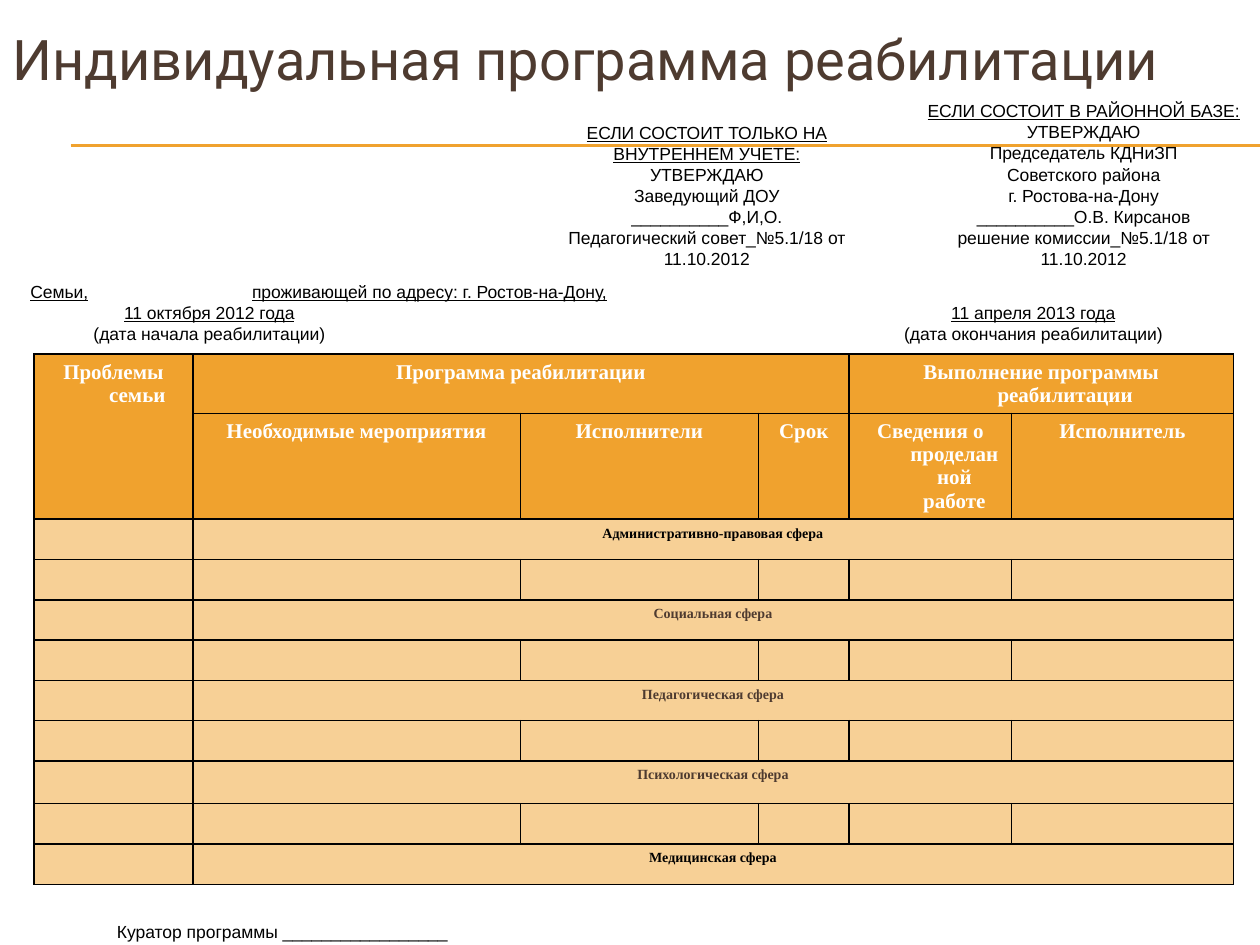
from pptx import Presentation
from pptx.dml.color import RGBColor
from pptx.enum.shapes import MSO_CONNECTOR
from pptx.enum.text import MSO_ANCHOR, PP_ALIGN
from pptx.oxml.ns import qn
from pptx.util import Inches, Pt
from lxml.etree import SubElement

GOLD, BROWN, BLACK, WHITE = "F0A22E", "4E3B30", "000000", "FFFFFF"
BODY = {"name": "Arial", "size": Pt(10), "color": BLACK}
LINED = {**BODY, "underline": True}
HEAD = {"name": "Times New Roman", "size": Pt(12), "bold": True, "color": WHITE}
COLS = [1.26, 2.6, 1.89, 0.72, 1.29, 1.76]
ROWS = [0.47, 0.84] + [0.32] * 5 + [0.32, 0.34, 0.32, 0.32]
HEADS = [(0, 0, 1, 0, "Проблемы семьи"),
         (0, 1, 0, 3, "Программа реабилитации"),
         (0, 4, 0, 5, "Выполнение программы реабилитации"),
         (1, 1, 1, 1, "Необходимые мероприятия"),
         (1, 2, 1, 2, "Исполнители"),
         (1, 3, 1, 3, "Срок"),
         (1, 4, 1, 4, "Сведения о проделанной работе"),
         (1, 5, 1, 5, "Исполнитель")]
SPHERES = [("Административно-правовая сфера", BLACK),
           ("Социальная сфера", BROWN),
           ("Педагогическая сфера", BROWN),
           ("Психологическая сфера", BROWN),
           ("Медицинская сфера", BLACK)]


def rgb(code):
    return RGBColor.from_string(code)


def style(font, fmt):
    for key, val in fmt.items():
        if key == "color":
            font.color.rgb = rgb(val)
        else:
            setattr(font, key, val)


def write(para, text, fmt):
    run = para.add_run()
    run.text = text
    style(run.font, fmt)


def add_tabs(para, stops):
    tabs = SubElement(para._p.get_or_add_pPr(), qn("a:tabLst"))
    for place, kind in stops:
        SubElement(tabs, qn("a:tab"), pos=str(Inches(place)), algn=kind)


def add_title(slide, box):
    title = slide.shapes.title
    title.left, title.top, title.width, title.height = map(Inches, box)
    frame = title.text_frame
    frame.vertical_anchor = MSO_ANCHOR.MIDDLE
    para = frame.paragraphs[0]
    para.alignment = PP_ALIGN.LEFT
    write(para, "Индивидуальная программа реабилитации",
          {"name": "Roboto", "size": Pt(32), "color": BROWN})


def add_rule(slide, left, right, top):
    line = slide.shapes.add_connector(
        MSO_CONNECTOR.STRAIGHT, *map(Inches, (left, top, right, top)))
    line.line.color.rgb = rgb(GOLD)
    line.line.width = Pt(0.75)
    SubElement(line._element.spPr, qn("a:effectLst"))


def add_text(slide, box, paras, align=PP_ALIGN.LEFT, anchor=MSO_ANCHOR.MIDDLE):
    """Each paragraph is a list of (text, format) runs."""
    frame = slide.shapes.add_textbox(*map(Inches, box)).text_frame
    frame.word_wrap = True
    frame.vertical_anchor = anchor
    for i, runs in enumerate(paras):
        para = frame.add_paragraph() if i else frame.paragraphs[0]
        para.alignment = align
        for text, fmt in runs:
            write(para, text, fmt)
    return frame


def add_stamp(slide, box, head, lines):
    paras = [[(head, LINED)]] + [[(line, BODY)] for line in lines]
    add_text(slide, box, paras, PP_ALIGN.CENTER)


def add_family(slide, box):
    frame = add_text(slide, box, [
        [("Семьи,\tпроживающей по адресу: г. Ростов-на-Дону,\t", LINED)],
        [("\t", BODY), ("11 октября 2012 года", LINED),
         ("\t", BODY), ("11 апреля 2013 года", LINED)],
        [("\t(дата начала реабилитации)\t(дата окончания реабилитации)", BODY)]])
    frame.margin_left = Inches(0.24)
    dates = [(1.42, "ctr"), (7.96, "ctr")]
    stops = [[(1.76, "l"), (9.46, "r")], dates, dates]
    for para, places in zip(frame.paragraphs, stops):
        add_tabs(para, places)


def paint(cell, alpha):
    props = cell._tc.get_or_add_tcPr()
    for side in ("lnL", "lnR", "lnT", "lnB"):
        edge = SubElement(props, qn("a:" + side), w=str(Pt(1)))
        fill = SubElement(edge, qn("a:solidFill"))
        SubElement(fill, qn("a:srgbClr"), val=BLACK)
    cell.fill.solid()
    cell.fill.fore_color.rgb = rgb(GOLD)
    if alpha < 100:
        tint = props.find(qn("a:solidFill")).find(qn("a:srgbClr"))
        SubElement(tint, qn("a:alpha"), val=str(alpha * 1000))


def fill_cell(cell, text, fmt):
    para = cell.text_frame.paragraphs[0]
    para.alignment = PP_ALIGN.CENTER
    props = para._p.get_or_add_pPr()
    props.set("marL", str(Inches(0.38)))
    props.set("indent", str(Inches(-0.38)))
    write(para, text, fmt)


def add_plan(slide, box):
    table = slide.shapes.add_table(
        len(ROWS), len(COLS), *map(Inches, box)).table
    for col, width in zip(table.columns, COLS):
        col.width = Inches(width)
    for r, (row, height) in enumerate(zip(table.rows, ROWS)):
        row.height = Inches(height)
        for cell in row.cells:
            paint(cell, 100 if r < 2 else 50)
            end = cell.text_frame.paragraphs[0]._p.get_or_add_endParaRPr()
            end.set("sz", "800")
    parts = [(*part, HEAD) for part in HEADS]
    for i, (name, color) in enumerate(SPHERES):
        row = 2 + 2 * i
        fmt = {**HEAD, "size": Pt(8), "color": color}
        parts.append((row, 1, row, 5, name, fmt))
    for top, left, low, right, text, fmt in parts:
        cell = table.cell(top, left)
        if (top, left) != (low, right):
            cell.merge(table.cell(low, right))
        fill_cell(cell, text, fmt)


def main():
    deck = Presentation()
    deck.slide_width, deck.slide_height = Inches(10), Inches(7.5)
    slide = deck.slides.add_slide(deck.slide_layouts[5])
    for top in (1.15, 1.16):
        add_rule(slide, 0.56, 10, top)
    add_title(slide, (0, 0, 9.5, 0.92))
    add_plan(slide, (0.27, 2.81, sum(COLS), sum(ROWS)))
    add_stamp(slide, (7.2, 0.75, 2.8, 1.43), "ЕСЛИ СОСТОИТ В РАЙОННОЙ БАЗЕ:",
              ["УТВЕРЖДАЮ", "Председатель КДНиЗП", "Советского района",
               "г. Ростова-на-Дону", "__________О.В. Кирсанов",
               "решение комиссии_№5.1/18 от 11.10.2012"])
    add_stamp(slide, (4.21, 0.92, 2.8, 1.27),
              "ЕСЛИ СОСТОИТ ТОЛЬКО НА ВНУТРЕННЕМ УЧЕТЕ:",
              ["УТВЕРЖДАЮ", "Заведующий ДОУ", "__________Ф,И,О.",
               "Педагогический совет_№5.1/18 от 11.10.2012"])
    add_family(slide, (0, 2.18, 9.81, 0.6))
    add_text(slide, (0.83, 7.26, 5.04, 0.27),
             [[("Куратор программы _________________", BODY)]],
             anchor=MSO_ANCHOR.TOP)
    deck.save("out.pptx")


if __name__ == "__main__":
    main()
